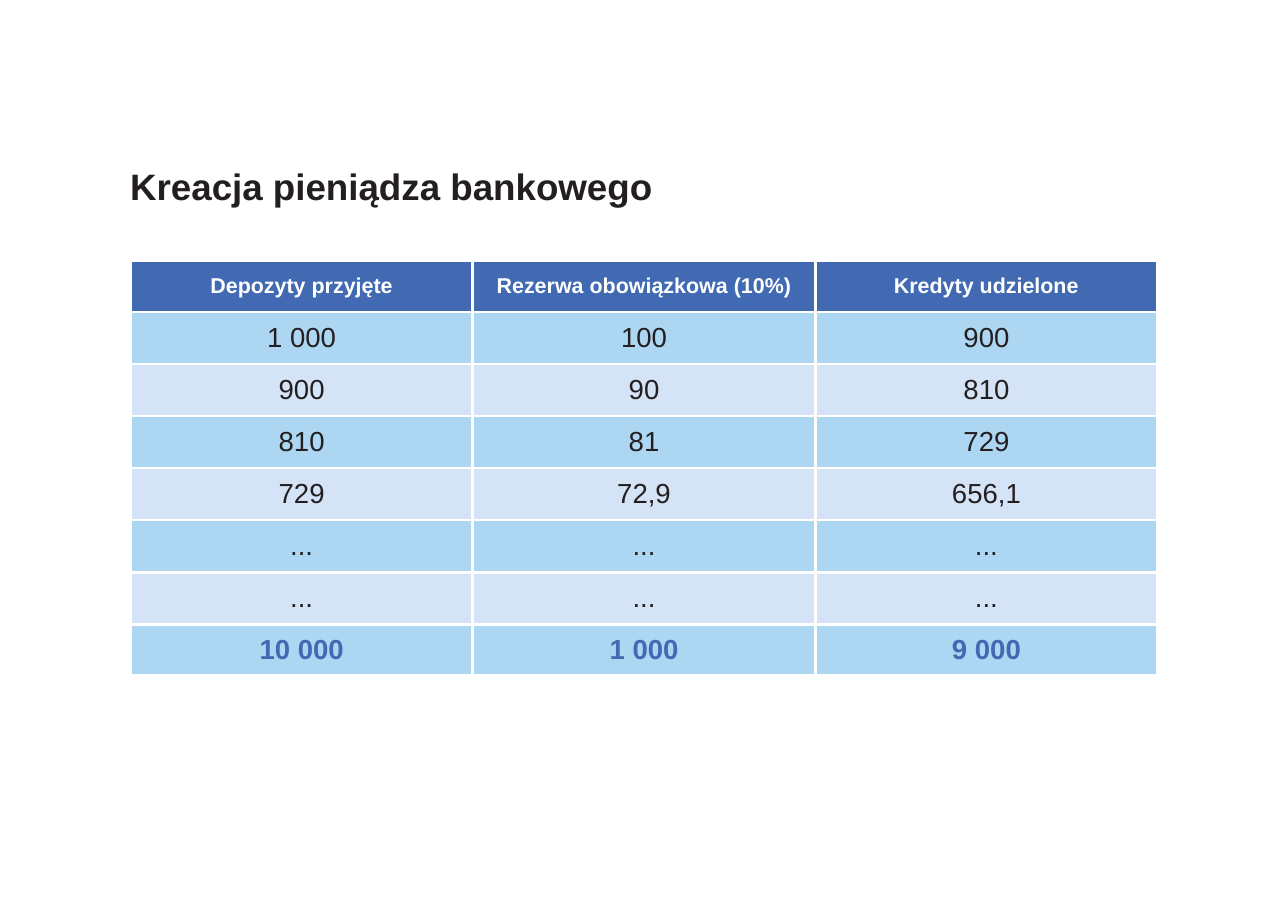
from dataclasses import dataclass

from lxml import etree
from pptx import Presentation
from pptx.dml.color import RGBColor
from pptx.enum.text import MSO_ANCHOR, MSO_AUTO_SIZE, PP_ALIGN
from pptx.oxml.ns import qn
from pptx.util import Cm, Pt

LEFT, CENTER = PP_ALIGN.LEFT, PP_ALIGN.CENTER
MIDDLE, BOTTOM = MSO_ANCHOR.MIDDLE, MSO_ANCHOR.BOTTOM
NO_AUTOFIT = MSO_AUTO_SIZE.NONE


@dataclass(frozen=True)
class Theme:
    font: str = "Arial"
    ink: str = "231F20"
    white: str = "FFFFFF"
    blue: str = "426AB3"
    sky: str = "ACD6F2"
    pale: str = "D4E3F5"
    title_size: int = 24
    header_size: int = 14
    body_size: int = 18
    border_width: int = 2


THEME = Theme()


def write(paragraph, text, size, color, bold, alignment):
    paragraph.alignment = alignment
    run = paragraph.add_run()
    run.text = text
    run.font.name = THEME.font
    run.font.size = Pt(size)
    run.font.bold = bold
    run.font.color.rgb = RGBColor.from_string(color)


def add_border(cell, side):
    """Draw a white line on one side of the cell: L, R, T or B."""
    properties = cell._tc.get_or_add_tcPr()
    line = etree.SubElement(properties, qn(f"a:ln{side}"), w=str(Pt(THEME.border_width)))
    fill = etree.SubElement(line, qn("a:solidFill"))
    etree.SubElement(fill, qn("a:srgbClr"), val=THEME.white)


presentation = Presentation()
presentation.slide_width = Cm(29.7)
presentation.slide_height = Cm(21)
slide = presentation.slides.add_slide(presentation.slide_layouts[5])

# Title
title = slide.shapes.title
title.left, title.top, title.width, title.height = Cm(3), Cm(3.76), Cm(23.7), Cm(1.04)
frame = title.text_frame
frame.margin_left = frame.margin_right = frame.margin_top = frame.margin_bottom = 0
frame.auto_size = NO_AUTOFIT
frame.word_wrap = True
frame.vertical_anchor = BOTTOM
write(frame.paragraphs[0], "Kreacja pieniądza bankowego",
      THEME.title_size, THEME.ink, True, LEFT)

# Deposits, reserves and loans
ROWS = [
    ["Depozyty przyjęte", "Rezerwa obowiązkowa (10%)", "Kredyty udzielone"],
    ["1 000", "100", "900"],
    ["900", "90", "810"],
    ["810", "81", "729"],
    ["729", "72,9", "656,1"],
    ["...", "...", "..."],
    ["...", "...", "..."],
    ["10 000", "1 000", "9 000"],
]
COLUMN_WIDTHS = [7.87, 7.92, 7.87]
OUTER_ROW_HEIGHT, INNER_ROW_HEIGHT = 1.17, 1.2
last_row, last_column = len(ROWS) - 1, len(COLUMN_WIDTHS) - 1

table = slide.shapes.add_table(len(ROWS), len(COLUMN_WIDTHS), Cm(3.02), Cm(6.02),
                               Cm(sum(COLUMN_WIDTHS)), Cm(9.54)).table
for column, width in zip(table.columns, COLUMN_WIDTHS):
    column.width = Cm(width)

for row_index, values in enumerate(ROWS):
    is_header, is_total = row_index == 0, row_index == last_row
    table.rows[row_index].height = Cm(
        OUTER_ROW_HEIGHT if is_header or is_total else INNER_ROW_HEIGHT)
    if is_header:
        size, color, background = THEME.header_size, THEME.white, THEME.blue
    else:
        size = THEME.body_size
        color = THEME.blue if is_total else THEME.ink
        background = THEME.sky if row_index % 2 else THEME.pale

    for column_index, value in enumerate(values):
        cell = table.cell(row_index, column_index)
        inner_sides = {"L": column_index > 0, "R": column_index < last_column,
                       "T": not is_header, "B": not is_total}
        for side, is_inner in inner_sides.items():
            if is_inner:
                add_border(cell, side)
        cell.fill.solid()
        cell.fill.fore_color.rgb = RGBColor.from_string(background)
        cell.margin_left = cell.margin_right = cell.margin_top = cell.margin_bottom = 0
        cell.vertical_anchor = MIDDLE
        write(cell.text_frame.paragraphs[0], value, size, color,
              is_header or is_total, CENTER)

presentation.save("out.pptx")
